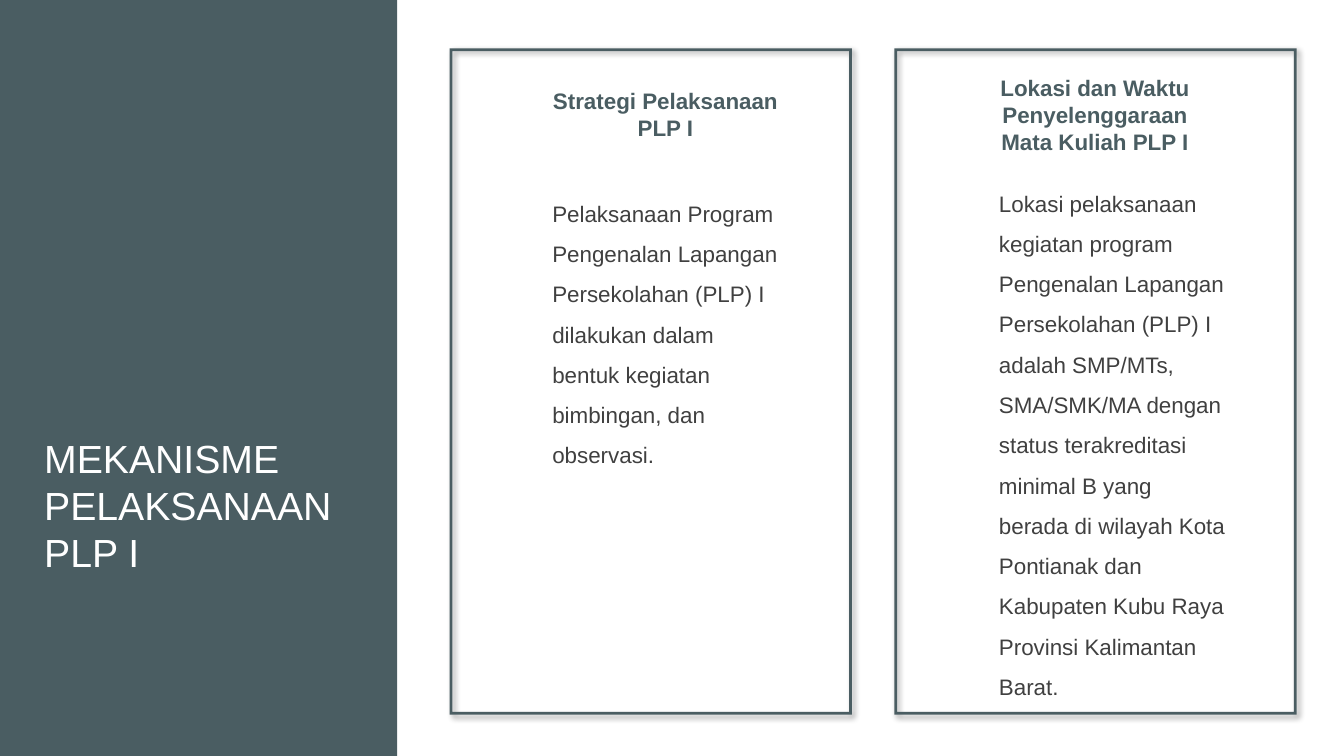
import pptx
import pptx.dml.color
import pptx.enum.shapes
import pptx.enum.text
import pptx.oxml
import pptx.oxml.ns
import pptx.util

Inches = pptx.util.Inches
SHAPES = pptx.enum.shapes.MSO_SHAPE
ALIGN = pptx.enum.text.PP_ALIGN
ANCHOR = pptx.enum.text.MSO_ANCHOR

SLATE = "4A5D62"
WHITE = "FFFFFF"
CHARCOAL = "404040"

SHADOW = (
    f'<a:effectLst {pptx.oxml.ns.nsdecls("a")}>'
    '<a:outerShdw blurRad="50800" dist="38100" dir="2700000" algn="tl" rotWithShape="0">'
    '<a:srgbClr val="000000"><a:alpha val="40000"/></a:srgbClr>'
    '</a:outerShdw></a:effectLst>'
)

HEADING = {"size": 16, "color": SLATE, "bold": True, "paragraph": {"alignment": ALIGN.CENTER}}
DETAIL = {"size": 16, "color": CHARCOAL, "paragraph": {"line_spacing": 1.5}}
TITLE = {"size": 28, "color": WHITE, "anchor": ANCHOR.MIDDLE,
         "paragraph": {"space_before": pptx.util.Pt(10)}}

CARDS = [
    {
        "heading": "Strategi Pelaksanaan PLP I",
        "heading_box": (0.92, 0.34, 2.44, 0.64),
        "detail": "Pelaksanaan Program Pengenalan Lapangan Persekolahan (PLP) I "
                  "dilakukan dalam bentuk kegiatan bimbingan, dan observasi.",
        "detail_box": (0.92, 1.32, 2.44, 2.88),
    },
    {
        "heading": "Lokasi dan Waktu Penyelenggaraan Mata Kuliah PLP I",
        "heading_box": (0.77, 0.21, 2.44, 0.91),
        "detail": "Lokasi pelaksanaan kegiatan program Pengenalan Lapangan "
                  "Persekolahan (PLP) I adalah SMP/MTs, SMA/SMK/MA dengan status "
                  "terakreditasi minimal B yang berada di wilayah Kota Pontianak "
                  "dan Kabupaten Kubu Raya Provinsi Kalimantan Barat.",
        "detail_box": (0.94, 1.22, 2.44, 5.3),
    },
]


def rgb(color):
    """Turn a hex string into a colour."""
    return pptx.dml.color.RGBColor.from_string(color)


def apply(target, values):
    """Set each named attribute on the target."""
    for name, value in values.items():
        setattr(target, name, value)


def add_block(slide, kind, box):
    """Add a flat slate shape."""
    block = slide.shapes.add_shape(kind, *map(Inches, box))
    block.shadow.inherit = False
    block.fill.solid()
    block.fill.fore_color.rgb = rgb(SLATE)
    block.line.fill.background()
    return block


def add_text(slide, wording, box, style):
    """Add one wrapped paragraph in the given style."""
    frame = slide.shapes.add_textbox(*map(Inches, box)).text_frame
    apply(frame, {"word_wrap": True, "vertical_anchor": style.get("anchor", ANCHOR.TOP)})
    paragraph = frame.paragraphs[0]
    apply(paragraph, style["paragraph"])
    run = paragraph.add_run()
    run.text = wording
    apply(run.font, {"name": "Arial", "size": pptx.util.Pt(style["size"]),
                     "bold": style.get("bold", False)})
    run.font.color.rgb = rgb(style["color"])


def add_title_panel(slide, left, top, width, height):
    """Draw the side panel with the slide title."""
    add_block(slide, SHAPES.RECTANGLE, (left, top, width, height))
    add_text(slide, "MEKANISME PELAKSANAAN PLP I",
             (left + 0.34, top + 3.96, 3.25, 2.1), TITLE)


def add_card(slide, card, left, top, width, height):
    """Draw a framed card with its heading and detail."""
    border = add_block(slide, SHAPES.FRAME, (left, top, width, height))
    border.adjustments[0] = 0.007
    properties = border.fill._xPr
    properties.remove(properties.find(pptx.oxml.ns.qn("a:effectLst")))
    properties.append(pptx.oxml.parse_xml(SHADOW))
    for part, style in (("detail", DETAIL), ("heading", HEADING)):
        x, y, text_width, text_height = card[f"{part}_box"]
        add_text(slide, card[part], (left + x, top + y, text_width, text_height), style)


def main():
    """Build and save the slide."""
    deck = pptx.Presentation()
    apply(deck, {"slide_width": Inches(13.33), "slide_height": Inches(7.5)})
    slide = deck.slides.add_slide(deck.slide_layouts[6])
    add_title_panel(slide, 0, 0, 3.94, 7.5)
    for index, card in enumerate(CARDS):
        add_card(slide, card, 4.46 + index * 4.41, 0.48, 3.99, 6.61)
    deck.save("out.pptx")


if __name__ == "__main__":
    main()
